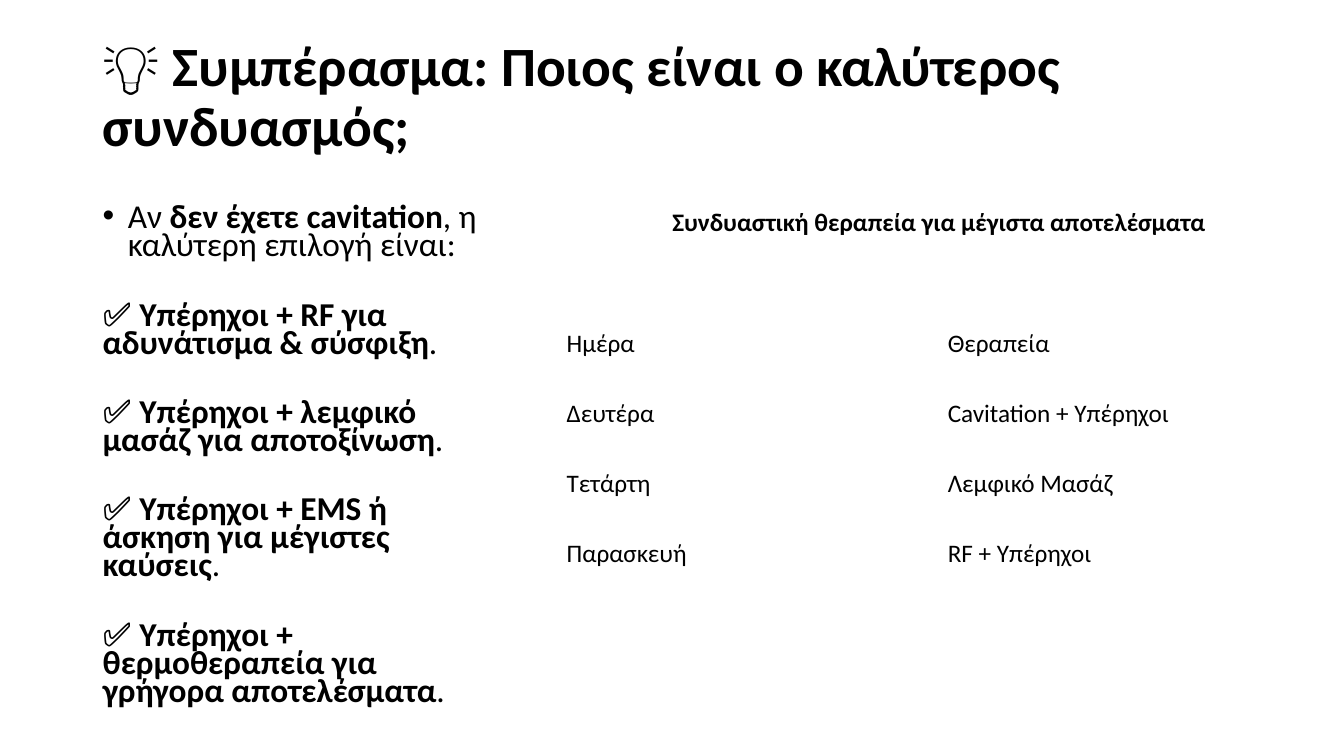
from dataclasses import dataclass
from typing import Any

from lxml import etree
from pptx import Presentation
from pptx import util as u
from pptx.dml.color import RGBColor
from pptx.enum import text
from pptx.oxml.ns import qn


@dataclass(frozen=True)
class Theme:
    font: str = "Calibri"
    ink: RGBColor = RGBColor(0x00, 0x00, 0x00)
    title: float = 39.6
    body: float = 23.8
    table: float = 18


@dataclass(frozen=True)
class Span:
    words: str
    bold: bool = False


@dataclass(frozen=True)
class Line:
    spans: tuple[Span, ...]
    space_before: float = 0
    bullet: bool = False


@dataclass(frozen=True)
class Block:
    at: tuple[float, float, float, float]
    lines: tuple[Line, ...]
    size: float
    line_spacing: float = 1.0
    frame: tuple[tuple[str, Any], ...] = ()


THEME = Theme()
CHOICES = (
    "Υπέρηχοι + RF για αδυνάτισμα & σύσφιξη",
    "Υπέρηχοι + λεμφικό μασάζ για αποτοξίνωση",
    "Υπέρηχοι + EMS ή άσκηση για μέγιστες καύσεις",
    "Υπέρηχοι + θερμοθεραπεία για γρήγορα αποτελέσματα",
)
INTRO = Line(
    (Span("Αν "), Span("δεν έχετε cavitation", True), Span(", η καλύτερη επιλογή είναι:")),
    bullet=True,
)
CHOICE_LINES = tuple(
    Line((Span("✅ "), Span(choice, True), Span(".")), space_before=29.5) for choice in CHOICES
)
BLOCKS = (
    Block(
        (0.92, 0.55, 11.5, 1.45),
        (Line((Span("💡 Συμπέρασμα: Ποιος είναι ο καλύτερος συνδυασμός;", True),)),),
        THEME.title,
        0.9,
        (("vertical_anchor", text.MSO_ANCHOR.MIDDLE), ("margin_bottom", u.Inches(0.65))),
    ),
    Block((0.92, 2, 4.04, 5.23), (INTRO, *CHOICE_LINES), THEME.body, 0.7),
    Block(
        (6.57, 2, 6.67, 0.4),
        (Line((Span("Συνδυαστική θεραπεία για μέγιστα αποτελέσματα", True),)),),
        THEME.table,
        frame=(("auto_size", text.MSO_AUTO_SIZE.SHAPE_TO_FIT_TEXT),),
    ),
)
SCHEDULE = (
    ("Ημέρα", "Θεραπεία"),
    ("Δευτέρα", "Cavitation + Υπέρηχοι"),
    ("Τετάρτη", "Λεμφικό Μασάζ"),
    ("Παρασκευή", "RF + Υπέρηχοι"),
)
SCHEDULE_AT = (5.52, 3.07, 7.56, 2.77)


def apply(target: Any, values: dict[str, Any]) -> None:
    for name, value in values.items():
        setattr(target, name, value)


def add_span(paragraph: Any, span: Span, size: float) -> None:
    run = paragraph.add_run()
    run.text = span.words
    apply(run.font, {"name": THEME.font, "size": u.Pt(size), "bold": span.bold})
    run.font.color.rgb = THEME.ink


def add_bullet(paragraph: Any) -> None:
    properties = paragraph._p.get_or_add_pPr()
    properties.set("marL", str(u.Inches(0.25)))
    properties.set("indent", str(u.Inches(-0.25)))
    etree.SubElement(properties, qn("a:buFont"), typeface="Arial")
    etree.SubElement(properties, qn("a:buChar"), char="•")


def add_block(slide: Any, block: Block) -> None:
    frame = slide.shapes.add_textbox(*map(u.Inches, block.at)).text_frame
    apply(frame, {"word_wrap": True, **dict(block.frame)})
    for index, line in enumerate(block.lines):
        paragraph = frame.add_paragraph() if index else frame.paragraphs[0]
        if line.bullet:
            add_bullet(paragraph)
        paragraph.line_spacing = block.line_spacing
        if line.space_before:
            paragraph.space_before = u.Pt(line.space_before)
        for span in line.spans:
            add_span(paragraph, span, block.size)


def add_schedule(slide: Any) -> None:
    table = slide.shapes.add_table(
        len(SCHEDULE), len(SCHEDULE[0]), *map(u.Inches, SCHEDULE_AT)
    ).table
    apply(table, {"first_row": False, "horz_banding": False})
    for row, entries in enumerate(SCHEDULE):
        for column, entry in enumerate(entries):
            cell = table.cell(row, column)
            cell.fill.background()
            cell.vertical_anchor = text.MSO_ANCHOR.MIDDLE
            add_span(cell.text_frame.paragraphs[0], Span(entry), THEME.table)


def main() -> None:
    presentation = Presentation()
    apply(presentation, {"slide_width": u.Inches(13.33), "slide_height": u.Inches(7.5)})
    slide = presentation.slides.add_slide(presentation.slide_layouts[6])
    for block in BLOCKS:
        add_block(slide, block)
    add_schedule(slide)
    presentation.save("out.pptx")


if __name__ == "__main__":
    main()
